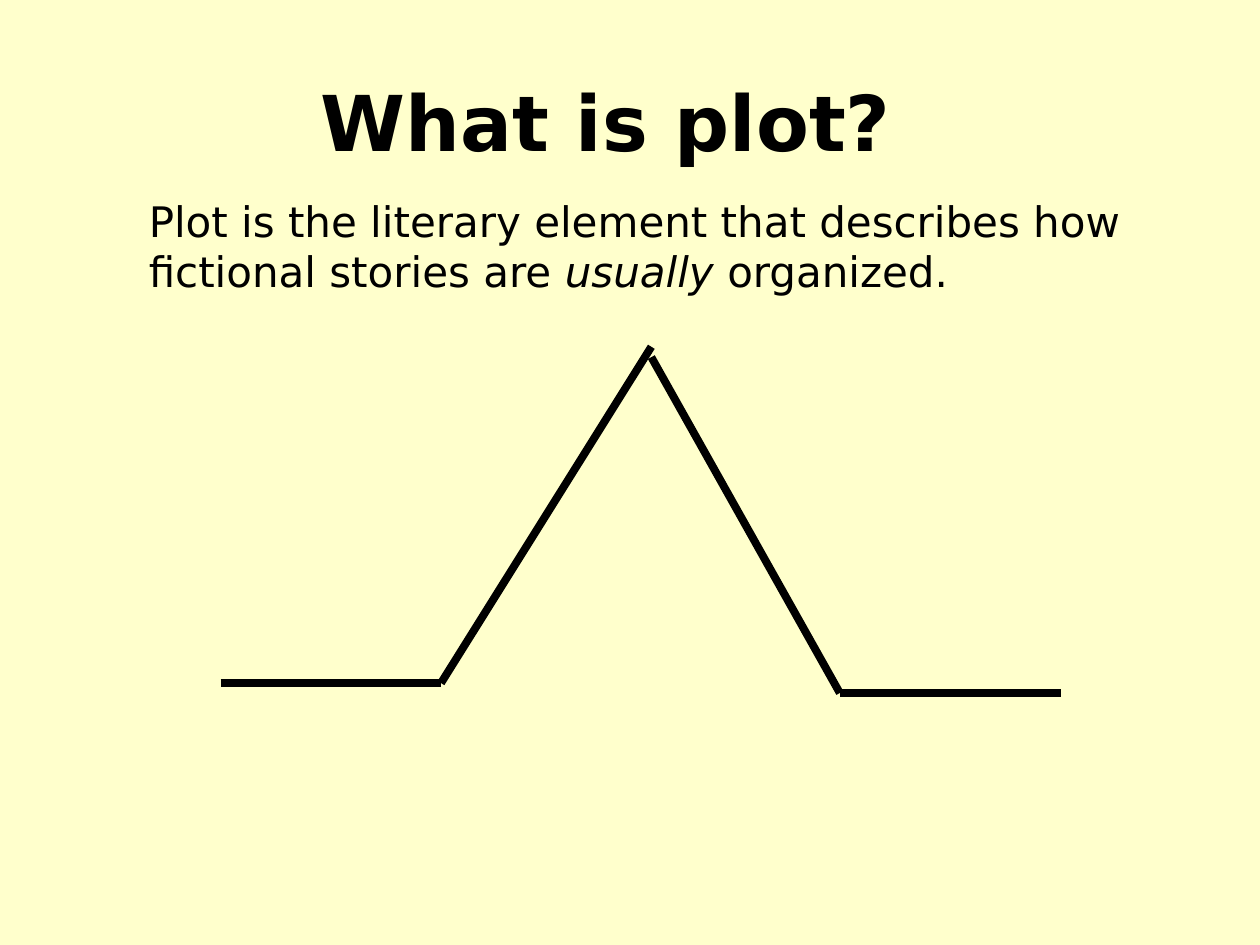
from dataclasses import dataclass
from itertools import pairwise

from pptx import Presentation
from pptx.dml.color import RGBColor as Rgb
from pptx.enum.shapes import MSO_CONNECTOR as Connector
from pptx.enum.text import MSO_ANCHOR as Anchor, PP_ALIGN as Align
from pptx.oxml.ns import qn
from pptx.util import Cm, Pt
from lxml.etree import SubElement


@dataclass(frozen=True)
class Theme:
    background: Rgb = Rgb(0xFF, 0xFF, 0xCC)
    ink: Rgb = Rgb(0, 0, 0)
    font: str = "DejaVu Sans"
    title_size: Pt = Pt(44)
    body_size: Pt = Pt(24)
    body_space: Pt = Pt(2.4)
    line_width: Pt = Pt(4.5)


THEME = Theme()


def add_text(page, left, top, width, height, runs, size):
    """Add a one-paragraph text box; return its frame."""
    box = page.shapes.add_textbox(Cm(left), Cm(top), Cm(width), Cm(height))
    frame = box.text_frame
    frame.word_wrap = True
    for text, bold, italic in runs:
        span = frame.paragraphs[0].add_run()
        span.text = text
        span.font.name = THEME.font
        span.font.size = size
        span.font.color.rgb = THEME.ink
        span.font.bold = bold
        span.font.italic = italic
    return frame


def add_line(page, start, end):
    line = page.shapes.add_connector(
        Connector.STRAIGHT, *(Cm(value) for value in (*start, *end))
    )
    line.line.color.rgb = THEME.ink
    line.line.width = THEME.line_width
    SubElement(line._element.spPr, qn("a:effectLst"))


def add_plot_diagram(page):
    """Draw the rise and the fall, each as a joined pair of lines."""
    rise = [(4.45, 13.77), (8.89, 13.77), (13.13, 6.99)]
    fall = [(13.13, 7.2), (16.93, 13.97), (21.38, 13.97)]
    for side in (rise, fall):
        for start, end in pairwise(side):
            add_line(page, start, end)


def main():
    deck = Presentation()
    deck.slide_width, deck.slide_height = Cm(25.4), Cm(19.05)
    page = deck.slides.add_slide(deck.slide_layouts[6])
    page.background.fill.solid()
    page.background.fill.fore_color.rgb = THEME.background

    # Definition
    definition = [
        ("Plot is the literary element that describes how fictional stories are ", False, False),
        ("usually", False, True),
        (" organized.", False, False),
    ]
    body = add_text(page, 2.75, 3.81, 22.86, 2.31, definition, THEME.body_size)
    body.paragraphs[0].space_before = THEME.body_space

    # Title
    heading = [("What is plot? ", True, False)]
    title = add_text(page, 1.69, 0.85, 21.59, 3.18, heading, THEME.title_size)
    title.vertical_anchor = Anchor.MIDDLE
    title.paragraphs[0].alignment = Align.CENTER

    # Plot diagram
    add_plot_diagram(page)

    deck.save("out.pptx")


if __name__ == "__main__":
    main()
